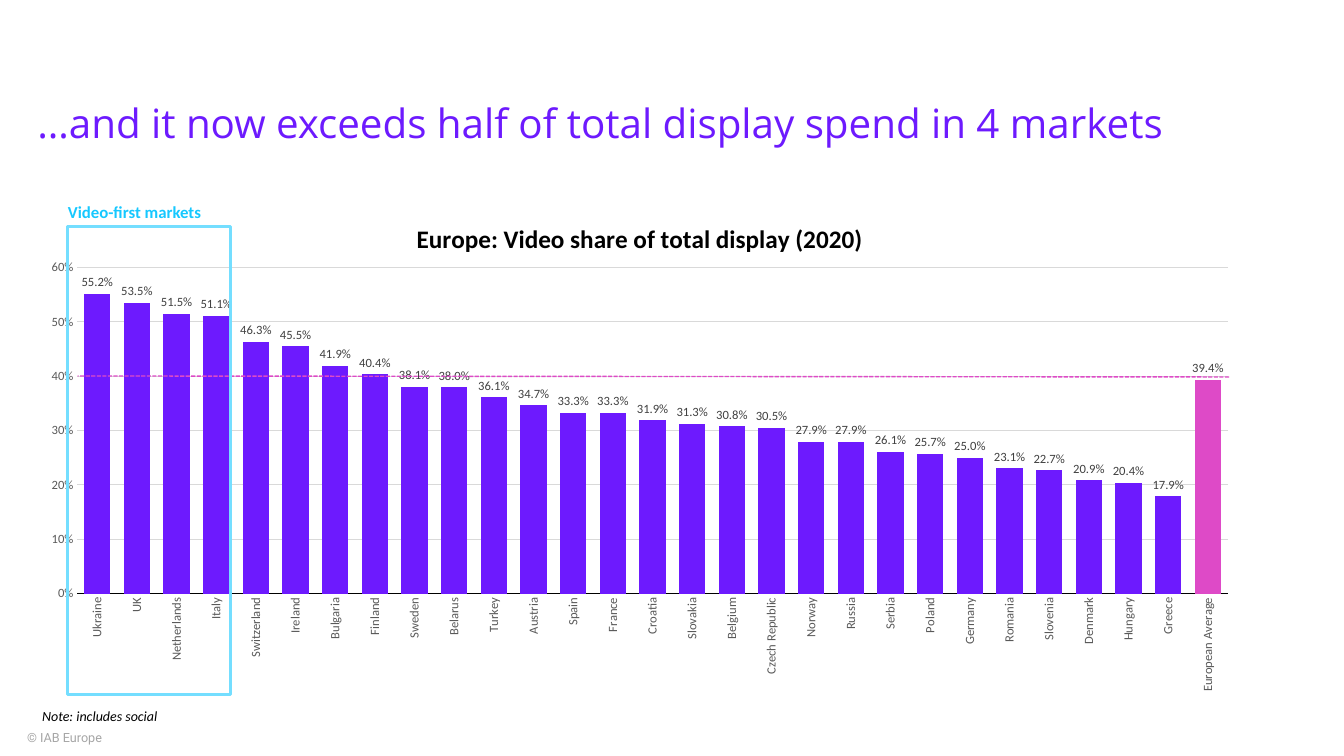
import pptx
import pptx.chart.data
import pptx.dml.color
import pptx.enum.chart
import pptx.enum.dml
import pptx.enum.shapes
import pptx.enum.text
import pptx.oxml
import pptx.oxml.ns
import pptx.util
from pptx.dml.color import RGBColor
from pptx.util import Inches

PURPLE = RGBColor(0x6D, 0x1A, 0xFE)
PINK = RGBColor(0xDE, 0x4A, 0xC7)
CYAN = RGBColor(0x16, 0xC8, 0xFF)
LIGHT_CYAN = RGBColor(0x74, 0xDE, 0xFF)
BLACK = RGBColor(0, 0, 0)
DARK_GREY = RGBColor(0x40, 0x40, 0x40)
AXIS_GREY = RGBColor(0x59, 0x59, 0x59)
COPYRIGHT_GREY = RGBColor(0xA6, 0xA6, 0xA6)
GRID_GREY = RGBColor(0xD9, 0xD9, 0xD9)

VIDEO_SHARES = {
    "Ukraine": 0.552, "UK": 0.535, "Netherlands": 0.515, "Italy": 0.511,
    "Switzerland": 0.463, "Ireland": 0.455, "Bulgaria": 0.419, "Finland": 0.404,
    "Sweden": 0.381, "Belarus": 0.38, "Turkey": 0.361, "Austria": 0.347,
    "Spain": 0.333, "France": 0.333, "Croatia": 0.319, "Slovakia": 0.313,
    "Belgium": 0.308, "Czech Republic": 0.305, "Norway": 0.279, "Russia": 0.279,
    "Serbia": 0.261, "Poland": 0.257, "Germany": 0.25, "Romania": 0.231,
    "Slovenia": 0.227, "Denmark": 0.209, "Hungary": 0.204, "Greece": 0.179,
    "European Average": 0.394,
}


def style_font(font, size, color, name="Calibri", bold=False, italic=False):
    """Set the typeface, size, colour and emphasis of a font."""
    font.name = name
    font.size = pptx.util.Pt(size)
    font.color.rgb = color
    font.bold = bold
    font.italic = italic


def add_label(slide, box, text, size, color, alignment=None, **style):
    """Add one line of text in the given box."""
    text_box = slide.shapes.add_textbox(*map(Inches, box))
    text_box.text_frame.word_wrap = True
    paragraph = text_box.text_frame.paragraphs[0]
    paragraph.text = text
    paragraph.alignment = alignment
    style_font(paragraph.runs[0].font, size, color, **style)


def place_title(slide, box, text):
    """Move the title placeholder to the box and format it."""
    title = slide.shapes.title
    title.left, title.top, title.width, title.height = map(Inches, box)
    title.text_frame.text = text
    title.text_frame.vertical_anchor = pptx.enum.text.MSO_ANCHOR.MIDDLE
    paragraph = title.text_frame.paragraphs[0]
    paragraph.alignment = pptx.enum.text.PP_ALIGN.LEFT
    paragraph.line_spacing = 0.9
    style_font(paragraph.runs[0].font, 28.8, PURPLE, name="Open Sans")


def set_plot_layout(chart, x, y, width, height):
    """Fix the inner plot area as fractions of the chart."""
    plot_area = chart.element.xpath("c:chart/c:plotArea")[0]
    for layout in plot_area.xpath("c:layout"):
        plot_area.remove(layout)
    fractions = "".join(
        f'<c:{tag} val="{value}"/>'
        for tag, value in (("x", x), ("y", y), ("w", width), ("h", height))
    )
    plot_area.insert(0, pptx.oxml.parse_xml(
        f'<c:layout {pptx.oxml.ns.nsdecls("c")}><c:manualLayout>'
        '<c:layoutTarget val="inner"/><c:xMode val="edge"/><c:yMode val="edge"/>'
        f"{fractions}</c:manualLayout></c:layout>"
    ))


def format_axes(chart):
    """Style both axes and turn the country names upright."""
    for axis in (chart.category_axis, chart.value_axis):
        axis.major_tick_mark = pptx.enum.chart.XL_TICK_MARK.NONE
        axis.minor_tick_mark = pptx.enum.chart.XL_TICK_MARK.NONE
        style_font(axis.tick_labels.font, 9, AXIS_GREY)
    countries, shares = chart.category_axis, chart.value_axis
    countries.format.line.color.rgb = BLACK
    countries.format.line.width = pptx.util.Pt(0.75)
    body = chart.element.xpath(".//c:catAx/c:txPr/a:bodyPr")[0]
    body.set("rot", "-5400000")
    body.set("vert", "horz")
    shares.minimum_scale, shares.maximum_scale, shares.major_unit = 0, 0.6, 0.1
    shares.tick_labels.number_format = "0%"
    shares.tick_labels.number_format_is_linked = False
    shares.format.line.fill.background()
    shares.major_gridlines.format.line.color.rgb = GRID_GREY
    shares.major_gridlines.format.line.width = pptx.util.Pt(0.75)


def add_share_chart(slide, box):
    """Add the column chart of video shares by country."""
    data = pptx.chart.data.CategoryChartData(number_format="0.0%")
    data.categories = list(VIDEO_SHARES)
    data.add_series("Series 1", list(VIDEO_SHARES.values()))
    chart = slide.shapes.add_chart(
        pptx.enum.chart.XL_CHART_TYPE.COLUMN_CLUSTERED, *map(Inches, box), data
    ).chart
    style_font(chart.font, 10, BLACK)
    chart.has_legend = False
    chart.has_title = True
    heading = chart.chart_title.text_frame
    heading.text = "Europe: Video share of total display (2020)"
    style_font(heading.paragraphs[0].runs[0].font, 18, BLACK, bold=True)
    chart.chart_title.include_in_layout = False
    set_plot_layout(chart, 0.041, 0.13, 0.939, 0.642)
    format_axes(chart)

    plot = chart.plots[0]
    plot.gap_width = 50
    plot.vary_by_categories = False
    series = plot.series[0]
    series.invert_if_negative = False
    for target, color in ((series, PURPLE), (series.points[len(VIDEO_SHARES) - 1], PINK)):
        target.format.fill.solid()
        target.format.fill.fore_color.rgb = color
    labels = series.data_labels
    labels.show_value = True
    labels.number_format = "0.0%"
    labels.number_format_is_linked = False
    labels.position = pptx.enum.chart.XL_LABEL_POSITION.OUTSIDE_END
    style_font(labels.font, 9, DARK_GREY)


def add_average_line(slide, start, end):
    """Draw the dashed line at the European average."""
    line = slide.shapes.add_connector(
        pptx.enum.shapes.MSO_CONNECTOR.STRAIGHT, *map(Inches, start + end)
    )
    line.line.color.rgb = PINK
    line.line.width = pptx.util.Pt(1)
    line.line.dash_style = pptx.enum.dml.MSO_LINE.SQUARE_DOT
    properties = line.element.xpath("p:spPr")[0]
    properties.append(pptx.oxml.parse_xml(f'<a:effectLst {pptx.oxml.ns.nsdecls("a")}/>'))


def add_market_frame(slide, box):
    """Frame the video-first markets and caption the frame."""
    left, top, width, height = box
    frame = slide.shapes.add_shape(
        pptx.enum.shapes.MSO_SHAPE.RECTANGLE, *map(Inches, box)
    )
    frame.shadow.inherit = False
    frame.fill.background()
    frame.line.color.rgb = LIGHT_CYAN
    frame.line.width = pptx.util.Pt(2.25)
    add_label(slide, (left - 0.4, top - 0.3, width + 0.51, 0.3), "Video-first markets",
              12, CYAN, pptx.enum.text.PP_ALIGN.CENTER, bold=True)


def main():
    """Build the slide and save the presentation."""
    presentation = pptx.Presentation()
    presentation.slide_width = Inches(13.33)
    presentation.slide_height = Inches(7.5)
    slide = presentation.slides.add_slide(presentation.slide_layouts.get_by_name("Title Only"))
    add_label(slide, (0.17, 7.19, 3.61, 0.25), "© IAB Europe", 9, COPYRIGHT_GREY, name="Roboto")
    place_title(slide, (0.27, 0.74, 12.15, 1.01),
                "…and it now exceeds half of total display spend in 4 markets")
    add_share_chart(slide, (0.27, 2, 12.15, 5.04))
    add_average_line(slide, (12.19, 3.74), (0.77, 3.73))
    add_market_frame(slide, (0.67, 2.25, 1.62, 4.64))
    add_label(slide, (0.32, 6.97, 1.43, 0.27), "Note: includes social", 10, BLACK, italic=True)
    presentation.save("out.pptx")


if __name__ == "__main__":
    main()
